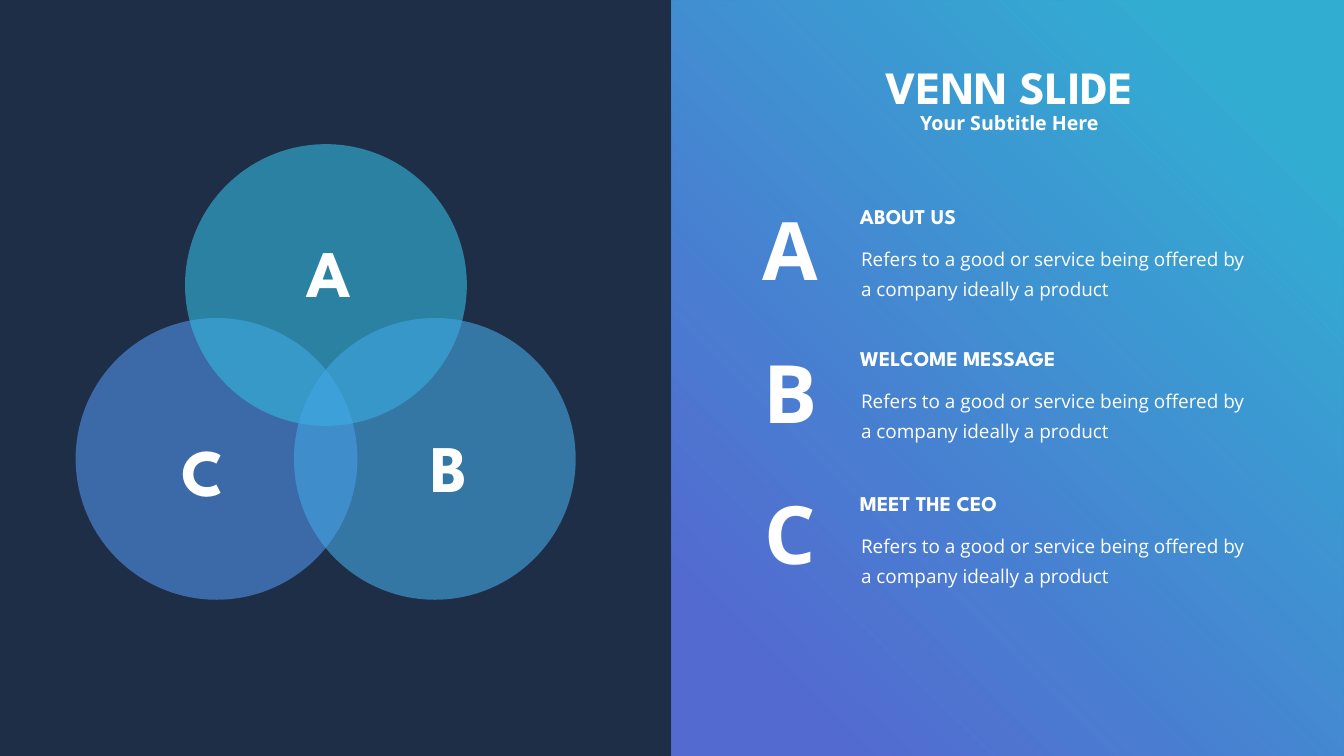
from lxml import etree
from pptx import Presentation
from pptx import util as u
from pptx.dml.color import RGBColor
from pptx.enum import shapes, text
from pptx.oxml import ns

PX = 9144  # EMU per px, 100 px to the inch
HEADING, BODY = "League Spartan", "Open Sans"
WHITE = "FFFFFF"
CENTER, LEFT = text.PP_ALIGN.CENTER, text.PP_ALIGN.LEFT
TOP, MIDDLE = text.MSO_ANCHOR.TOP, text.MSO_ANCHOR.MIDDLE


def paint(color, hex_color, opacity=100):
    """Set a colour format to a hex colour, with its opacity in percent."""
    color.rgb = RGBColor.from_string(hex_color)
    if opacity < 100:
        # The colour element is the only one of its value inside the fill or stop
        return f"{opacity * 1000}"


def write(sp, box, words, size, font, bold=True, align=CENTER, anchor=TOP,
          line=None, before=0, insets=(10, 5, 10, 5), wrap=False):
    """Place a text shape and fill it with one formatted run."""
    sp.left, sp.top, sp.width, sp.height = [v * PX for v in box]
    tf = sp.text_frame
    tf.auto_size = text.MSO_AUTO_SIZE.NONE
    tf.word_wrap = wrap
    tf.vertical_anchor = anchor
    tf.margin_left, tf.margin_top, tf.margin_right, tf.margin_bottom = [v * PX for v in insets]
    p = tf.paragraphs[0]
    p.alignment = align
    p.space_before = u.Pt(before)
    if line:
        p.line_spacing = u.Pt(line)
    r = p.add_run()
    r.text = words
    r.font.size, r.font.name, r.font.bold = u.Pt(size), font, bold
    paint(r.font.color, WHITE)


prs = Presentation()
prs.slide_width, prs.slide_height = 2666 * PX, 1500 * PX
s = prs.slides.add_slide(prs.slide_layouts[0])
s.background.fill.solid()
paint(s.background.fill.fore_color, "1F2E47")

# Gradient panel on the right half
panel = s.shapes.add_shape(shapes.MSO_SHAPE.RECTANGLE, 1333 * PX, 0, 1333 * PX, 1500 * PX)
panel.shadow.inherit = False
panel.line.fill.background()
panel.fill.gradient()
panel.fill.gradient_angle = 225
opacities = []
for stop, position, color, opacity in zip(
        panel.fill.gradient_stops, (0.14, 0.87), ("34B9DF", "5D76EA"), (91, 84)):
    stop.position = position
    opacities.append(paint(stop.color, color, opacity))

# Venn circles
DIAMETER = 559
for left, top, color in ((150, 631, "5091E7"), (367, 286, "34B9DF"), (583, 631, "42A6E3")):
    circle = s.shapes.add_shape(shapes.MSO_SHAPE.OVAL, left * PX, top * PX,
                                DIAMETER * PX, DIAMETER * PX)
    circle.shadow.inherit = False
    circle.line.fill.background()
    circle.fill.solid()
    opacities.append(paint(circle.fill.fore_color, color, 60))

# Transparency of the panel stops and the circles, in drawing order
fill_colors = s.shapes.element.xpath("./p:sp/p:spPr/a:gradFill//a:srgbClr | ./p:sp/p:spPr/a:solidFill/a:srgbClr")
for color, alpha in zip(fill_colors, opacities):
    etree.SubElement(color, ns.qn("a:alpha")).set("val", alpha)

for letter, left, top, width in (("A", 589, 473, 125), ("B", 836, 860, 109), ("C", 342, 868, 120)):
    write(s.shapes.add_textbox(0, 0, 0, 0), (left, top, width, 155), letter, 95, HEADING, line=100)

# Legend: big letter, heading and description
DESCRIPTION = "Refers to a good or service being offered by a company ideally a product"
for letter, heading, letter_top, top in (("A", "ABOUT US", 379, 399),
                                         ("B", "WELCOME MESSAGE", 664, 681),
                                         ("C", "MEET THE CEO", 943, 968)):
    write(s.shapes.add_textbox(0, 0, 0, 0), (1502, letter_top, 132, 223), letter, 115, BODY,
          line=100, insets=(10, 70, 10, 5))
    write(s.shapes.add_textbox(0, 0, 0, 0), (1696, top, 473, 61), heading, 30, HEADING,
          align=LEFT, anchor=MIDDLE)
    write(s.shapes.add_textbox(0, 0, 0, 0), (1684, top + 66, 835, 139), DESCRIPTION, 27, BODY,
          bold=False, align=LEFT, line=43, before=5.4, insets=(24, 12, 24, 12), wrap=True)

# Title and subtitle, brought in front of the panel
title, subtitle = s.shapes.title, s.placeholders[1]
write(title, (1707, 81, 590, 143), "VENN SLIDE", 66, HEADING, line=100)
write(subtitle, (1813, 215, 378, 57), "Your Subtitle Here", 28, BODY, anchor=MIDDLE)
for sp in (title, subtitle):
    s.shapes.element.append(sp.element)

prs.save("out.pptx")
